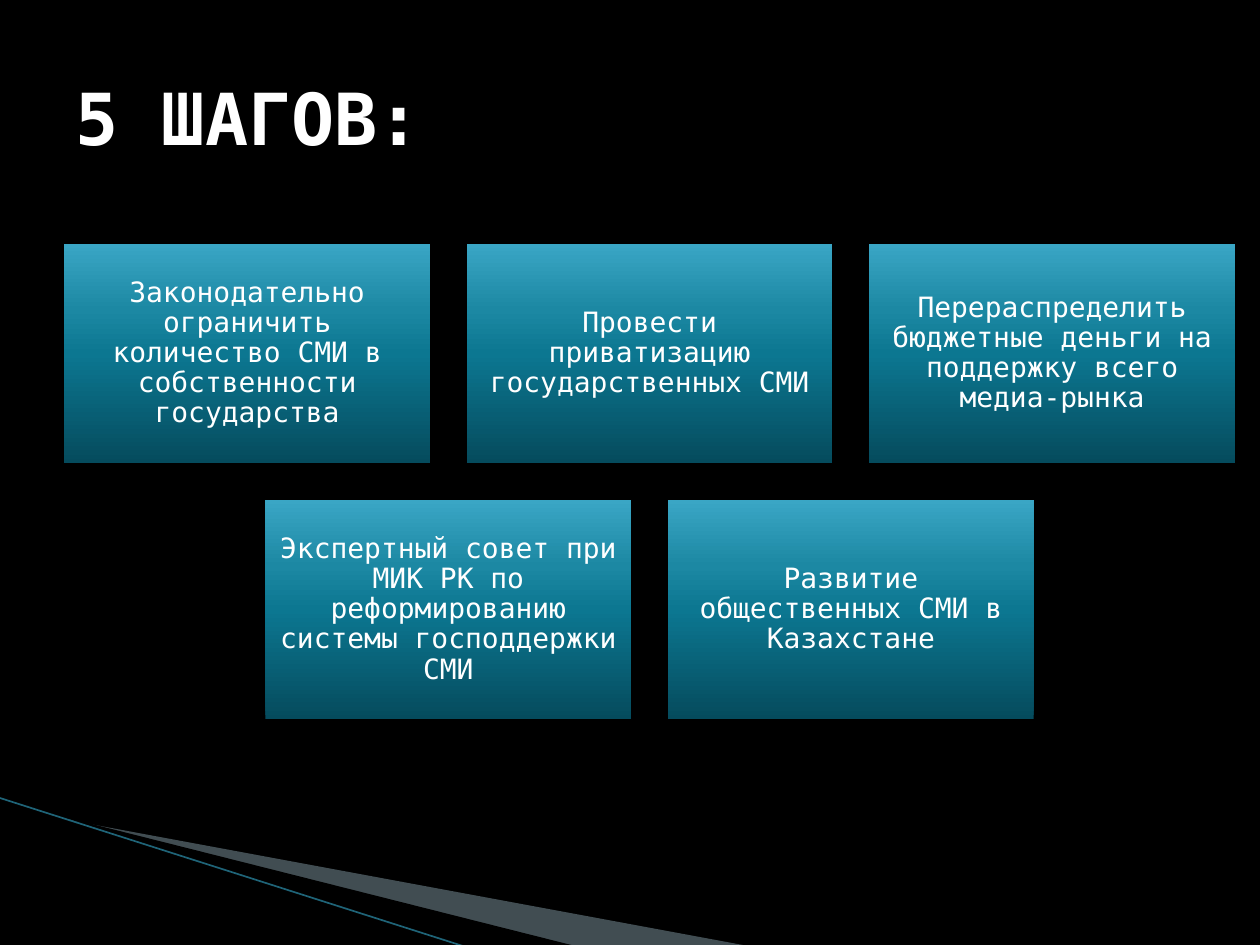
from lxml.etree import SubElement
from pptx import Presentation
from pptx.dml.color import RGBColor
from pptx.enum.shapes import MSO_CONNECTOR, MSO_SHAPE
from pptx.enum.text import MSO_ANCHOR, PP_ALIGN
from pptx.oxml.ns import qn
from pptx.util import Pt

COLORS = {
    "background": "000000",
    "text": "FFFFFF",
    "wedge": "A3C2CE",
    "line": "1F6478",
    "deep": "054B5D",
    "teal": "0C7791",
    "bright": "1C88A3",
    "light": "3AA6C5",
}
CARD_STOPS = [(0, "deep"), (50, "teal"), (70, "bright"), (100, "light")]
STEP_ROWS = [
    [
        "Законодательно ограничить количество СМИ в собственности государства",
        "Провести приватизацию государственных СМИ",
        "Перераспределить бюджетные деньги на поддержку всего медиа-рынка",
    ],
    [
        "Экспертный совет при МИК РК по реформированию системы господдержки СМИ",
        "Развитие общественных СМИ в Казахстане",
    ],
]
CARD_WIDTH, CARD_HEIGHT, GAP = 209, 125.4, 21
ROWS_CENTER, ROWS_TOP = 371.2, 139.3


class StepsSlide:
    """Holds the style and the current slide, and draws each kind of element."""

    font_name = "DejaVu Sans Mono"

    def __init__(self, presentation):
        self.slide = presentation.slides.add_slide(presentation.slide_layouts[5])
        self.shapes = self.slide.shapes
        fill = self.slide.background.fill
        fill.solid()
        fill.fore_color.rgb = self.color("background")

    def color(self, name):
        return RGBColor.from_string(COLORS[name])

    def add_text(self, paragraph, text, size, bold=False):
        run = paragraph.add_run()
        run.text = text
        run.font.name = self.font_name
        run.font.size = Pt(size)
        run.font.bold = bold
        run.font.color.rgb = self.color("text")

    def title(self, text, left, top, width, height):
        heading = self.shapes.title
        heading.left, heading.top = Pt(left), Pt(top)
        heading.width, heading.height = Pt(width), Pt(height)
        heading.text_frame.vertical_anchor = MSO_ANCHOR.MIDDLE
        paragraph = heading.text_frame.paragraphs[0]
        paragraph.alignment = PP_ALIGN.LEFT
        self.add_text(paragraph, text, 41, bold=True)

    def wedge(self, points, color, opacity=100):
        start, *others = [(Pt(x), Pt(y)) for x, y in points]
        builder = self.shapes.build_freeform(*start)
        builder.add_line_segments(others, close=True)
        wedge = builder.convert_to_shape()
        wedge.shadow.inherit = False
        wedge.line.fill.background()
        wedge.fill.solid()
        wedge.fill.fore_color.rgb = self.color(color)
        if opacity < 100:
            tint = wedge._element.spPr.find(qn("a:solidFill"))[0]
            SubElement(tint, qn("a:alpha"), val=str(opacity * 1000))

    def line(self, start, end, color, width):
        ends = [Pt(value) for value in (*start, *end)]
        line = self.shapes.add_connector(MSO_CONNECTOR.STRAIGHT, *ends)
        line.line.color.rgb = self.color(color)
        line.line.width = Pt(width)
        SubElement(line._element.spPr, qn("a:effectLst"))

    def card(self, text, left, top):
        card = self.shapes.add_shape(
            MSO_SHAPE.RECTANGLE, Pt(left), Pt(top), Pt(CARD_WIDTH), Pt(CARD_HEIGHT)
        )
        card.shadow.inherit = False
        card.line.fill.background()
        card.fill.gradient()
        card.fill.gradient_angle = 90
        stops = card._element.spPr.find(qn("a:gradFill")).find(qn("a:gsLst"))
        for stop in list(stops):
            stops.remove(stop)
        for position, color in CARD_STOPS:
            stop = SubElement(stops, qn("a:gs"), pos=str(position * 1000))
            SubElement(stop, qn("a:srgbClr"), val=COLORS[color])
        frame = card.text_frame
        frame.word_wrap = True
        frame.vertical_anchor = MSO_ANCHOR.MIDDLE
        frame.margin_left = frame.margin_right = Pt(5)
        frame.margin_top = frame.margin_bottom = Pt(5)
        paragraph = frame.paragraphs[0]
        paragraph.alignment = PP_ALIGN.CENTER
        paragraph.line_spacing = 0.9
        self.add_text(paragraph, text, 16)


def main():
    presentation = Presentation()
    presentation.slide_width, presentation.slide_height = Pt(720), Pt(540)
    steps = StepsSlide(presentation)
    steps.wedge([(39.6, 468.7), (428.4, 540.7), (328.3, 540.7), (39.6, 468)], "wedge", 40)
    steps.wedge([(38.2, 467.3), (329, 540.7), (267.8, 541.4), (38.9, 468)], "background")
    steps.line((-0.7, 455.8), (267.1, 541.4), "line", 0.95)
    for row, texts in enumerate(STEP_ROWS):
        row_width = len(texts) * (CARD_WIDTH + GAP) - GAP
        top = ROWS_TOP + row * (CARD_HEIGHT + GAP)
        for column, text in enumerate(texts):
            left = ROWS_CENTER - row_width / 2 + column * (CARD_WIDTH + GAP)
            steps.card(text, left, top)
    steps.title("5 ШАГОВ:", 36, 21.6, 648, 90)
    presentation.save("out.pptx")


if __name__ == "__main__":
    main()
